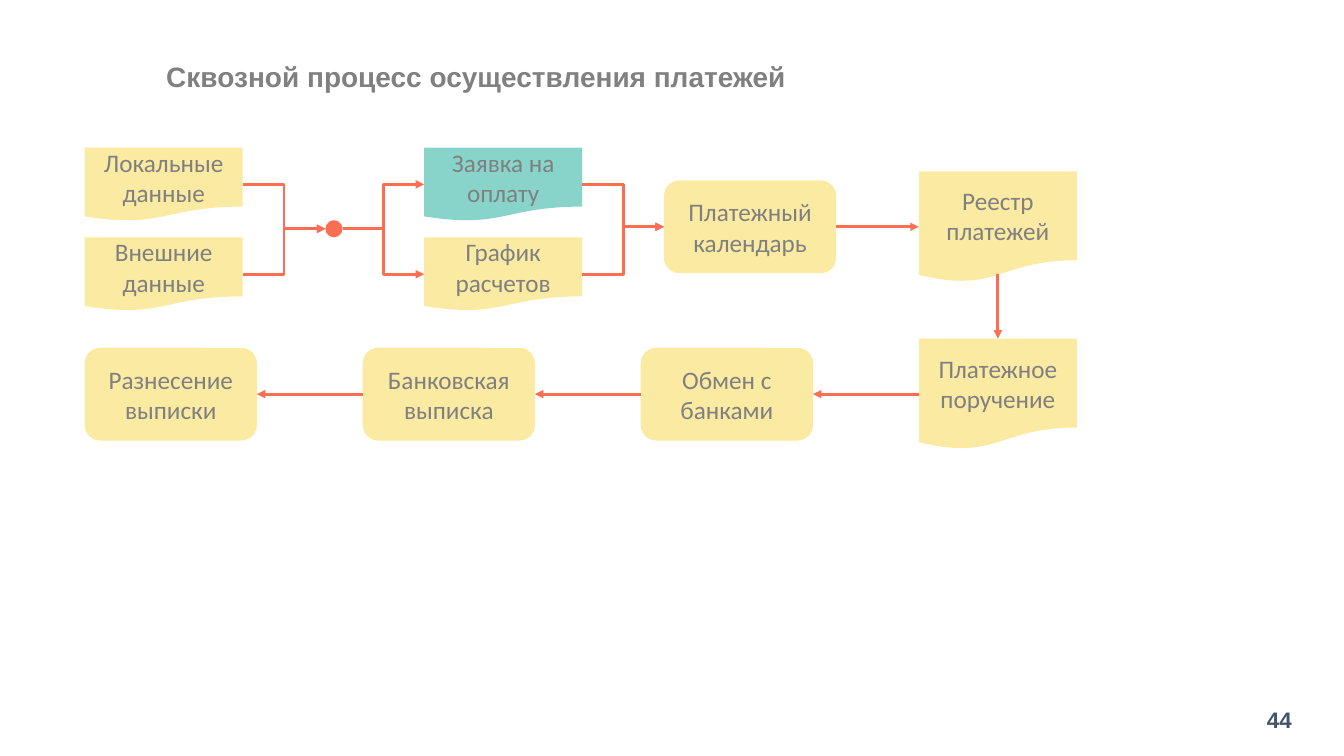
from lxml import etree
from pptx import Presentation, util as u
from pptx.dml.color import RGBColor
from pptx.enum import shapes, text
from pptx.oxml.ns import qn

TITLE = "Сквозной процесс осуществления платежей"
NUMBER = "44"
COLORS = {"sand": "FBEAA2", "teal": "89D4CA", "coral": "FC6E51",
          "gray": "808080", "navy": "44546A"}
COLS = {"source": 0.84, "statement": 3.6, "plan": 4.21, "bank": 6.36,
        "calendar": 6.59, "order": 9.12}
ROWS = {"upper": 1.83, "main": 2.25, "join": 2.27, "lower": 2.72, "return": 3.91}
DOC, ROUND = shapes.MSO_SHAPE.FLOWCHART_DOCUMENT, shapes.MSO_SHAPE.ROUNDED_RECTANGLE
KINDS = {"data": (DOC, 1.57, 0.73), "paper": (DOC, 1.57, 1.1), "step": (ROUND, 1.71, 0.92)}
BOXES = {
    "local": ("Локальные данные", "data", "source", "upper", "sand"),
    "external": ("Внешние данные", "data", "source", "lower", "sand"),
    "request": ("Заявка на оплату", "data", "plan", "upper", "teal"),
    "schedule": ("График расчетов", "data", "plan", "lower", "sand"),
    "calendar": ("Платежный календарь", "step", "calendar", "main", "sand"),
    "register": ("Реестр платежей", "paper", "order", "main", "sand"),
    "order": ("Платежное поручение", "paper", "order", "return", "sand"),
    "exchange": ("Обмен с банками", "step", "bank", "return", "sand"),
    "statement": ("Банковская выписка", "step", "statement", "return", "sand"),
    "posting": ("Разнесение выписки", "step", "source", "return", "sand"),
}
JOIN_X, JOIN_SIZE = 3.23, 0.17
TOP, LEFT, BOTTOM, RIGHT = range(4)
ELBOW, LINE = shapes.MSO_CONNECTOR.ELBOW, shapes.MSO_CONNECTOR.STRAIGHT
LINKS = [
    ("local", RIGHT, "join", LEFT, ELBOW),
    ("external", RIGHT, "join", LEFT, ELBOW),
    ("join", RIGHT, "request", LEFT, ELBOW),
    ("join", RIGHT, "schedule", LEFT, ELBOW),
    ("request", RIGHT, "calendar", LEFT, ELBOW),
    ("schedule", RIGHT, "calendar", LEFT, ELBOW),
    ("calendar", RIGHT, "register", LEFT, LINE),
    ("register", BOTTOM, "order", TOP, LINE),
    ("order", LEFT, "exchange", RIGHT, LINE),
    ("exchange", LEFT, "statement", RIGHT, LINE),
    ("statement", LEFT, "posting", RIGHT, LINE),
]
WAVE = 0.07
BOX_FONT = {"name": "Calibri", "size": u.Pt(18), "bold": False}
TITLE_FONT = {"name": "Arial", "size": u.Pt(20), "bold": True}
NUMBER_FONT = {"name": "Arial", "size": u.Pt(16), "bold": True}


def rgb(name):
    return RGBColor.from_string(COLORS[name])


def write(sp, words, font, color, align, spacing=1.0):
    tf = sp.text_frame
    tf.word_wrap = True
    tf.auto_size = text.MSO_AUTO_SIZE.NONE
    tf.vertical_anchor = text.MSO_ANCHOR.MIDDLE
    p = tf.paragraphs[0]
    p.alignment, p.line_spacing = align, spacing
    r = p.add_run()
    r.text = words
    for key, value in font.items():
        setattr(r.font, key, value)
    r.font.color.rgb = rgb(color)


def add_box(s, shape, x, y, w, h, color):
    sp = s.shapes.add_shape(shape, *map(u.Inches, (x, y - h / 2, w, h)))
    sp.shadow.inherit = False
    sp.fill.solid()
    sp.fill.fore_color.rgb = rgb(color)
    sp.line.fill.background()
    return sp


def side(sp, site):
    across = {TOP: 0.5, LEFT: 0, BOTTOM: 0.5, RIGHT: 1}[site]
    down = {TOP: 0, LEFT: 0.5, BOTTOM: 1, RIGHT: 0.5}[site]
    return int(sp.left + sp.width * across), int(sp.top + sp.height * down)


def add_link(s, nodes, start, out, end, into, kind):
    a, b = nodes[start], nodes[end]
    c = s.shapes.add_connector(kind, *side(a, out), *side(b, into))
    if start != "join":
        c.begin_connect(a, out)
    if end != "join":
        c.end_connect(b, into)
    if out == BOTTOM:
        c.begin_y = int(a.top + a.height * (1 - WAVE))
    c.line.color.rgb = rgb("coral")
    c.line.width = u.Pt(2)
    etree.SubElement(c.line._get_or_add_ln(), qn("a:tailEnd"), type="triangle")
    etree.SubElement(c._element.spPr, qn("a:effectLst"))


def main():
    prs = Presentation()
    prs.slide_width, prs.slide_height = u.Inches(13.34), u.Inches(7.5)
    s = prs.slides.add_slide(prs.slide_layouts[5])

    title = s.shapes.title
    for key, value in zip(("left", "top", "width", "height"), (1.55, 0.05, 10.87, 1.45)):
        setattr(title, key, u.Inches(value))
    write(title, TITLE, TITLE_FONT, "gray", text.PP_ALIGN.LEFT, 0.9)

    number = s.shapes.add_textbox(*map(u.Inches, (11.92, 6.93, 1, 0.39)))
    write(number, NUMBER, NUMBER_FONT, "navy", text.PP_ALIGN.RIGHT, 1.1)

    nodes = {}
    for name, (words, kind, col, row, color) in BOXES.items():
        shape, w, h = KINDS[kind]
        nodes[name] = add_box(s, shape, COLS[col], ROWS[row], w, h, color)
        write(nodes[name], words, BOX_FONT, "gray", text.PP_ALIGN.CENTER)
    nodes["join"] = add_box(s, shapes.MSO_SHAPE.FLOWCHART_CONNECTOR, JOIN_X, ROWS["join"],
                            JOIN_SIZE, JOIN_SIZE, "coral")

    for link in LINKS:
        add_link(s, nodes, *link)
    prs.save("out.pptx")


if __name__ == "__main__":
    main()
